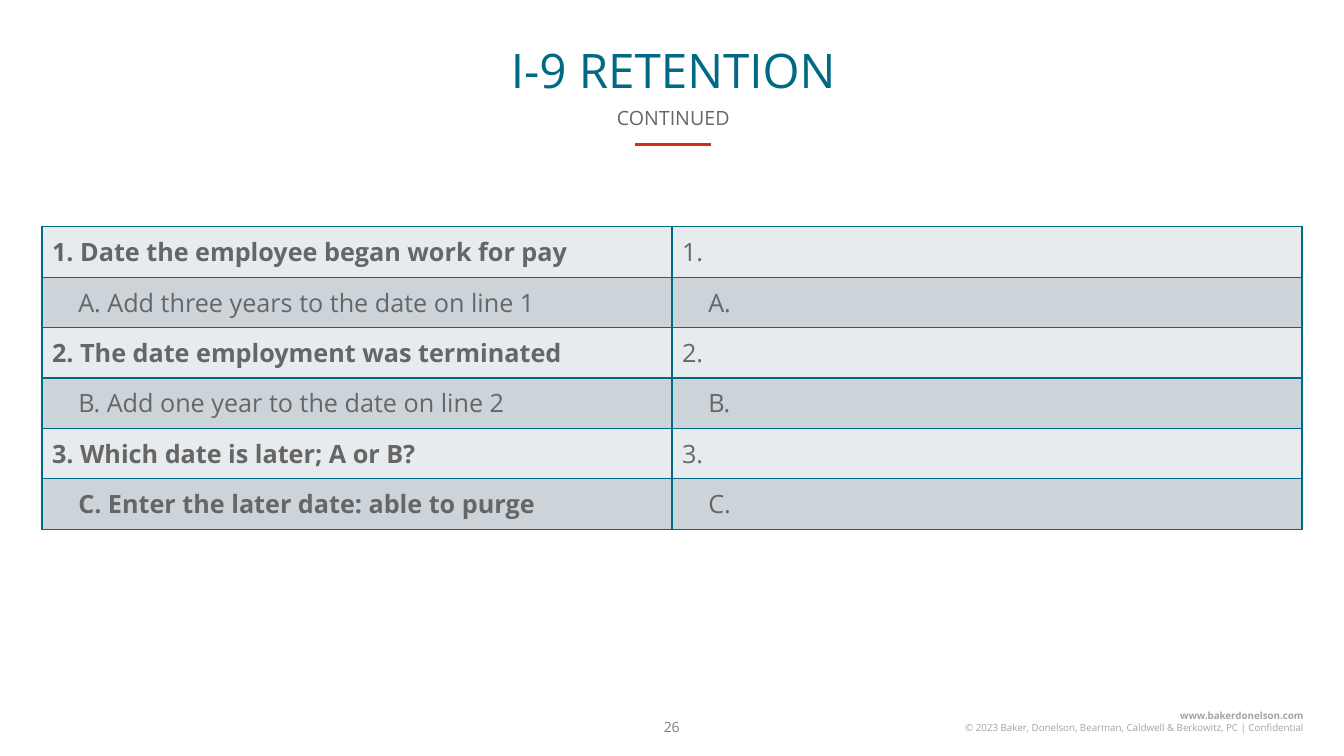
from dataclasses import dataclass

from lxml.etree import SubElement
from pptx import Presentation
from pptx.dml.color import RGBColor
from pptx.enum.shapes import MSO_CONNECTOR as Connector
from pptx.enum.text import MSO_ANCHOR as Anchor, PP_ALIGN as Align
from pptx.oxml.ns import qn
from pptx.util import Pt

FONT = "Open Sans"
COLORS = {
    "teal": "006983",
    "red": "D52B1E",
    "text": "666666",
    "number": "7F7F7F",
    "footer": "A2A4A3",
    "light": "E7EBED",
    "dark": "CCD4D9",
}
ROW_HEIGHT = 36
COLUMN_WIDTH = 450
STEP_INDENT = 18.72


@dataclass
class Line:
    text: str
    size: float
    color: str
    bold: bool = False


@dataclass
class Label:
    left: float
    top: float
    width: float
    height: float
    lines: list[Line]
    align: Align = Align.CENTER
    anchor: Anchor = Anchor.TOP


@dataclass
class Step:
    mark: str
    text: str
    bold: bool
    indented: bool


LABELS = [
    Label(583.2, 503.28, 354.96, 24.48, [
        Line("www.bakerdonelson.com", 7, "footer", True),
        Line("© 2023 Baker, Donelson, Bearman, Caldwell & Berkowitz, PC | Confidential", 7, "footer"),
    ], Align.RIGHT),
    Label(414, 509.76, 131.76, 19.44, [Line("26", 10, "number")]),
    Label(30.96, 29.52, 900, 39.6, [Line("I-9 RETENTION", 34, "teal")], anchor=Anchor.MIDDLE),
    Label(30.96, 73.44, 900, 21.6, [Line("CONTINUED", 14, "text")], anchor=Anchor.MIDDLE),
]

STEPS = [
    Step("1.", "Date the employee began work for pay", True, False),
    Step("A.", "Add three years to the date on line 1", False, True),
    Step("2.", "The date employment was terminated", True, False),
    Step("B.", "Add one year to the date on line 2", False, True),
    Step("3.", "Which date is later; A or B?", True, False),
    Step("C.", "Enter the later date: able to purge", True, True),
]


def rgb(name: str) -> RGBColor:
    return RGBColor.from_string(COLORS[name])


def add_run(paragraph, line: Line) -> None:
    run = paragraph.add_run()
    run.text = line.text
    run.font.name = FONT
    run.font.size = Pt(line.size)
    run.font.bold = line.bold
    run.font.color.rgb = rgb(line.color)


def add_label(slide, label: Label) -> None:
    box = slide.shapes.add_textbox(Pt(label.left), Pt(label.top), Pt(label.width), Pt(label.height))
    frame = box.text_frame
    frame.word_wrap = True
    frame.vertical_anchor = label.anchor
    for index, line in enumerate(label.lines):
        paragraph = frame.add_paragraph() if index else frame.paragraphs[0]
        paragraph.alignment = label.align
        add_run(paragraph, line)


def add_accent_line(slide) -> None:
    connector = slide.shapes.add_connector(Connector.STRAIGHT, Pt(453.6), Pt(103.2), Pt(507.6), Pt(103.2))
    connector.line.color.rgb = rgb("red")
    connector.line.width = Pt(1.5)
    SubElement(connector._element.spPr, qn("a:effectLst"))


def add_borders(cell) -> None:
    properties = cell._tc.get_or_add_tcPr()
    for side in ("a:lnL", "a:lnR", "a:lnT", "a:lnB"):
        border = SubElement(properties, qn(side), w=str(Pt(1)))
        fill = SubElement(border, qn("a:solidFill"))
        SubElement(fill, qn("a:srgbClr"), val=COLORS["teal"])


def fill_cell(cell, line: Line, background: str, indented: bool) -> None:
    add_borders(cell)
    cell.fill.solid()
    cell.fill.fore_color.rgb = rgb(background)
    cell.vertical_anchor = Anchor.MIDDLE
    paragraph = cell.text_frame.paragraphs[0]
    if indented:
        paragraph._p.get_or_add_pPr().set("marL", str(Pt(STEP_INDENT)))
    add_run(paragraph, line)


def add_step_table(slide) -> None:
    frame = slide.shapes.add_table(
        len(STEPS), 2, Pt(30), Pt(162), Pt(2 * COLUMN_WIDTH), Pt(len(STEPS) * ROW_HEIGHT)
    )
    table = frame.table
    table.first_row = False
    table.horz_banding = False
    for row, step in enumerate(STEPS):
        background = "dark" if step.indented else "light"
        question = Line(f"{step.mark} {step.text}", 18, "text", step.bold)
        answer = Line(step.mark, 18, "text")
        for column, line in enumerate((question, answer)):
            fill_cell(table.cell(row, column), line, background, step.indented)


def main() -> None:
    presentation = Presentation()
    presentation.slide_width = Pt(960)
    presentation.slide_height = Pt(540)
    slide = presentation.slides.add_slide(presentation.slide_layouts[6])
    add_accent_line(slide)
    add_step_table(slide)
    for label in LABELS:
        add_label(slide, label)
    presentation.save("out.pptx")


if __name__ == "__main__":
    main()
